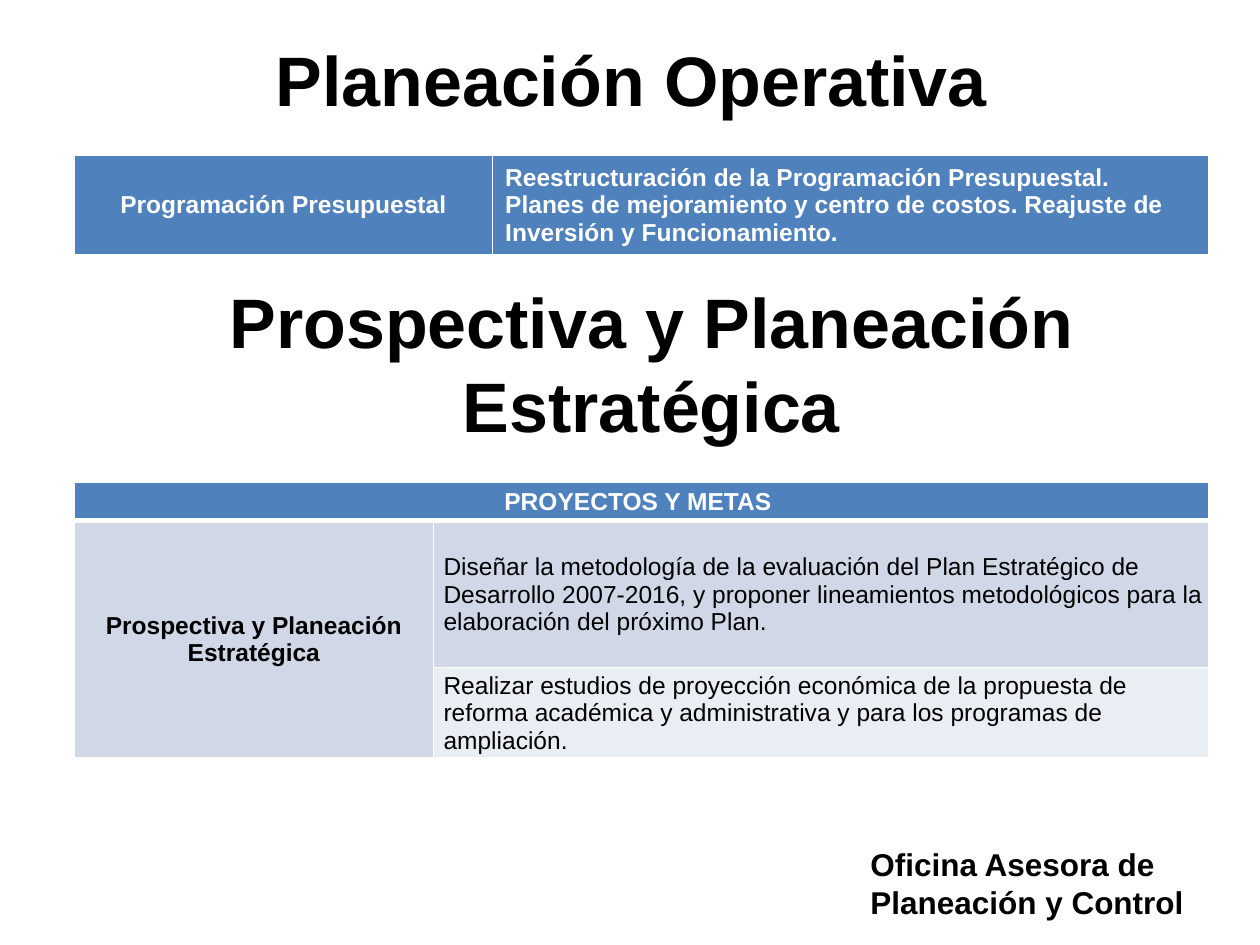
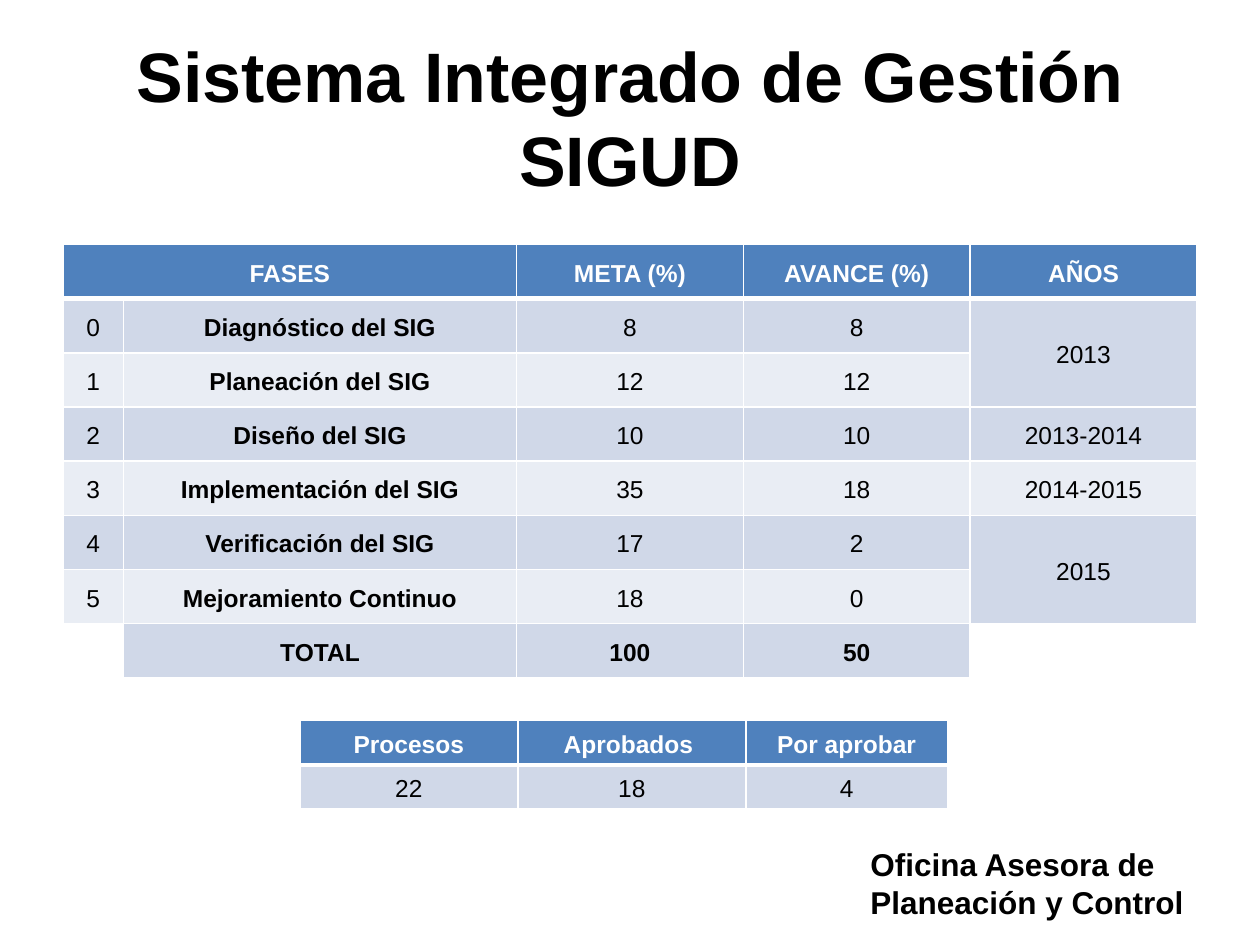
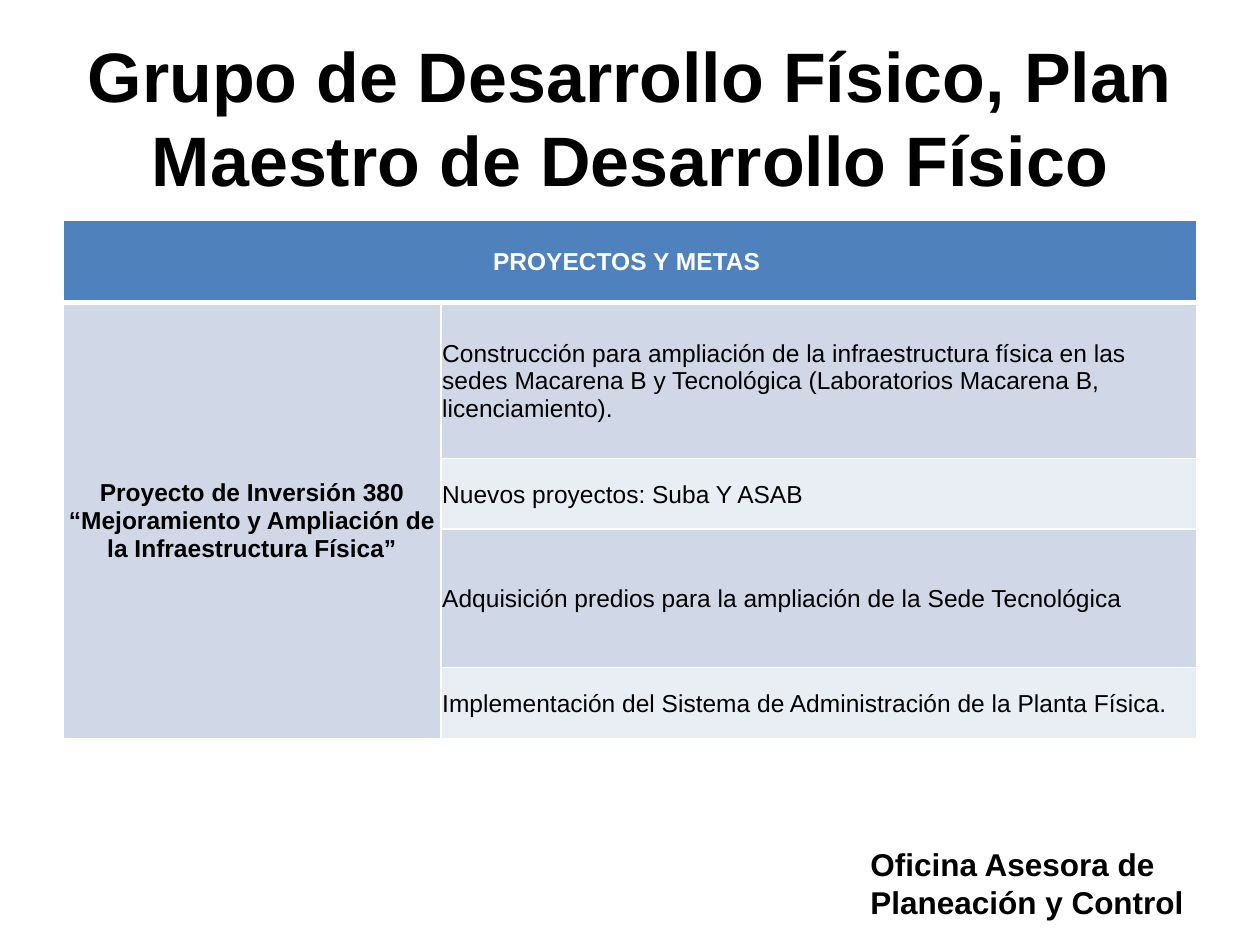
import pptx
import pptx.util
import pptx.dml.color
import pptx.enum.text
import pptx.oxml
import pptx.oxml.ns

Inches = pptx.util.Inches
RGB = pptx.dml.color.RGBColor
ALIGN = pptx.enum.text.PP_ALIGN
MIDDLE = pptx.enum.text.MSO_ANCHOR.MIDDLE

BLUE = RGB(0x4F, 0x81, 0xBD)
DARK = RGB(0xD0, 0xD8, 0xE8)
LIGHT = RGB(0xE9, 0xED, 0xF4)
BLACK = RGB(0, 0, 0)
WHITE = RGB(255, 255, 255)

OFFICE = "Oficina Asesora de Planeación y Control"
GOALS = "PROYECTOS Y METAS "
TIGHT = (0.01, 0.01, 0.01, 0)   # cell insets: left, top, right, bottom
SIDE = (0.05, 0, 0.05, 0)
PLAIN = (0.1, 0.05, 0.1, 0.05)

# Cell marks: "<" joins the cell on its left, "^" the one above
PHASES = [
    ("FASES", "<", "META (%)", "AVANCE (%)", "AÑOS"),
    ("0", "Diagnóstico del SIG", "8", "8", "2013"),
    ("1", "Planeación del SIG", "12", "12", "^"),
    ("2", "Diseño del SIG", "10", "10", "2013-2014"),
    ("3", "Implementación del SIG", "35", "18", "2014-2015"),
    ("4", "Verificación del SIG", "17", "2", "2015"),
    ("5", "Mejoramiento Continuo", "18", "0", "^"),
    ("", "TOTAL", "100", "50", ""),
]


def write(frame, text, size, color=BLACK, bold=True, align=ALIGN.LEFT, gap=None):
    para = frame.paragraphs[0]
    para.alignment = align
    if gap:
        para.line_spacing = gap
    run = para.add_run()
    run.text = text
    style = {"name": "Arial", "size": pptx.util.Pt(size), "bold": bold}
    for key, value in style.items():
        setattr(run.font, key, value)
    run.font.color.rgb = color


def add_text(slide, box, text, size, **style):
    frame = slide.shapes.add_textbox(*map(Inches, box)).text_frame
    frame.word_wrap = True
    write(frame, text, size, **style)
    return frame


def add_title(slide, text, box=(0.5, 0.3, 9, 1.25)):
    frame = add_text(slide, box, text, 40, align=ALIGN.CENTER)
    frame.vertical_anchor = MIDDLE


def add_foot(slide):
    add_text(slide, (6.81, 6.66, 3.03, 0.71), OFFICE, 18)


def set_edges(cell, top, bottom):
    props = cell._tc.get_or_add_tcPr()
    for side, width in {"L": 1, "R": 1, "T": top, "B": bottom}.items():
        props.append(pptx.oxml.parse_xml(
            f'<a:ln{side} {pptx.oxml.ns.nsdecls("a")} w="{width * 12700}">'
            f'<a:solidFill><a:srgbClr val="{WHITE}"/></a:solidFill></a:ln{side}>'))


def join(grid, rows):
    """Merge each cell with the marked cells right of or below it."""
    for r, row in enumerate(rows):
        for c, text in enumerate(row):
            if text in ("<", "^"):
                continue
            right, low = c, r
            while right + 1 < len(row) and row[right + 1] == "<":
                right += 1
            while low + 1 < len(rows) and rows[low + 1][c] == "^":
                low += 1
            if (right, low) != (c, r):
                grid.cell(r, c).merge(grid.cell(low, right))


def add_grid(slide, left, top, widths, heights, rows, pad, pads=None,
             bold=(), flush=(), gap=None):
    """Draw a banded table; bold and flush name its bold and left-set columns."""
    grid = slide.shapes.add_table(
        len(rows), len(widths), Inches(left), Inches(top),
        Inches(sum(widths)), Inches(sum(heights))).table
    grid.first_row = grid.horz_banding = False
    for parts, key, sizes in ((grid.columns, "width", widths),
                              (grid.rows, "height", heights)):
        for part, size in zip(parts, sizes):
            setattr(part, key, Inches(size))
    for r, row in enumerate(rows):
        head = r == 0
        for c, text in enumerate(row):
            cell = grid.cell(r, c)
            cell.vertical_anchor = MIDDLE
            inset = (pads or {}).get(c, pad)
            for side, size in zip(("left", "top", "right", "bottom"), inset):
                setattr(cell, "margin_" + side, Inches(size))
            set_edges(cell, 3 if r == 1 else 1, 3 if head else 1)
            if not text:
                cell.fill.background()
                continue
            cell.fill.solid()
            cell.fill.fore_color.rgb = BLUE if head else DARK if r % 2 else LIGHT
            if text not in ("<", "^"):
                write(cell.text_frame, text, 14, WHITE if head else BLACK,
                      head or c in bold or "TOTAL" in row,
                      ALIGN.LEFT if c in flush else ALIGN.CENTER, gap)
    join(grid, rows)


def plan_slide(slide):
    add_title(slide, "Planeación Operativa", (0.51, 0, 9, 1.25))
    add_grid(slide, 0.59, 1.23, (3.32, 5.68), (0.74,), [
        ("Programación Presupuestal",
         "Reestructuración de la Programación Presupuestal. Planes de "
         "mejoramiento y centro de costos. Reajuste de Inversión y "
         "Funcionamiento."),
    ], PLAIN, flush=(1,))
    add_title(slide, "Prospectiva y Planeación Estratégica", (0.67, 2.25, 9, 1.25))
    add_grid(slide, 0.59, 3.83, (2.85, 6.15), (0.3, 1.17, 0.66), [
        (GOALS, "<"),
        ("Prospectiva y Planeación Estratégica",
         "Diseñar la metodología de la evaluación del Plan Estratégico de "
         "Desarrollo 2007-2016, y proponer lineamientos metodológicos para "
         "la elaboración del próximo Plan."),
        ("^",
         "Realizar estudios de proyección económica de la propuesta de "
         "reforma académica y administrativa y para los programas de "
         "ampliación."),
    ], TIGHT, pads={1: (0.08, 0.01, 0.01, 0)}, bold=(0,), flush=(1,))


def phase_slide(slide):
    add_title(slide, "Sistema Integrado de Gestión SIGUD")
    add_grid(slide, 0.5, 1.94, (0.48, 3.12, 1.8, 1.8, 1.8),
             (0.43,) * len(PHASES), PHASES, SIDE, bold=(1,), gap=1.15)
    add_grid(slide, 2.38, 5.72, (1.73, 1.81, 1.6), (0.35, 0.35), [
        ("Procesos", "Aprobados ", "Por aprobar"),
        ("22", "18", "4"),
    ], SIDE, gap=1.15)


def works_slide(slide):
    add_title(slide, "Grupo de Desarrollo Físico, Plan Maestro de Desarrollo Físico")
    add_grid(slide, 0.5, 1.75, (3, 6), (0.65, 1.24, 0.56, 1.1, 0.56), [
        (GOALS, "<"),
        ("Proyecto de Inversión 380 “Mejoramiento y Ampliación de la "
         "Infraestructura Física”",
         "Construcción para ampliación de la infraestructura física en las "
         "sedes Macarena B y Tecnológica (Laboratorios Macarena B, "
         "licenciamiento)."),
        ("^", "Nuevos proyectos: Suba Y ASAB"),
        ("^", "Adquisición predios para la ampliación de la Sede Tecnológica"),
        ("^", "Implementación del Sistema de Administración de la Planta Física."),
    ], TIGHT, bold=(0,), flush=(1,))


def main():
    deck = pptx.Presentation()
    deck.slide_width, deck.slide_height = Inches(10), Inches(7.5)
    for build in (plan_slide, phase_slide, works_slide):
        slide = deck.slides.add_slide(deck.slide_layouts[6])
        add_foot(slide)
        build(slide)
    deck.save("out.pptx")


if __name__ == "__main__":
    main()
